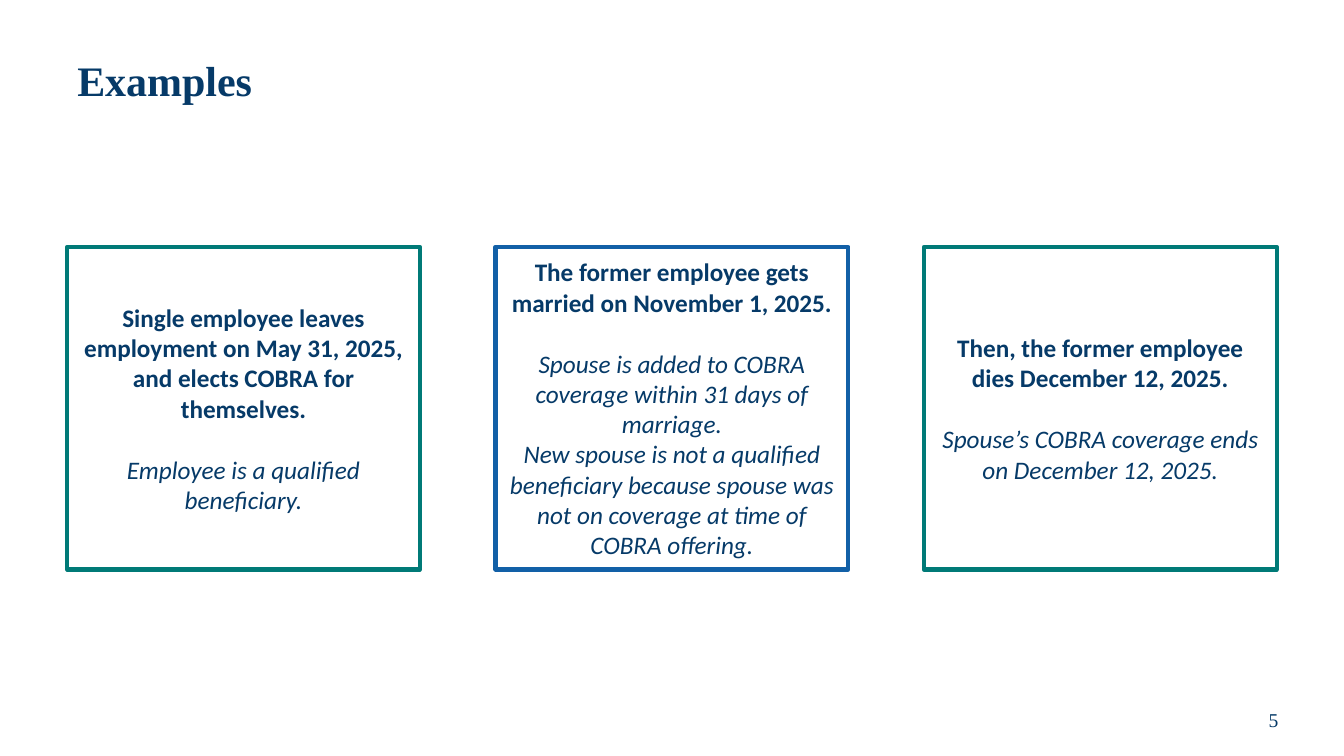
from dataclasses import dataclass

from pptx import Presentation
from pptx.dml.color import RGBColor
from pptx.enum import shapes, text
from pptx.util import Pt

NAVY, BLUE, TEAL = "063A68", "1260A7", "007A77"
CARD_LEFT, CARD_TOP, CARD_WIDTH, CARD_HEIGHT = 48, 176.4, 252, 230.4
CARD_PITCH = 306
BLANK_LINE = 22


@dataclass
class Example:
    event: str
    outcomes: list[str]
    border: str


EXAMPLES = [
    Example(
        "Single employee leaves employment on May 31, 2025, and elects COBRA for themselves.",
        ["Employee is a qualified beneficiary."],
        TEAL,
    ),
    Example(
        "The former employee gets married on November 1, 2025.",
        [
            "Spouse is added to COBRA coverage within 31 days of marriage.",
            "New spouse is not a qualified beneficiary because spouse was not on "
            "coverage at time of COBRA offering.",
        ],
        BLUE,
    ),
    Example(
        "Then, the former employee dies December 12, 2025.",
        ["Spouse’s COBRA coverage ends on December 12, 2025."],
        TEAL,
    ),
]


def set_color(color_format, hex_color: str) -> None:
    color_format.rgb = RGBColor.from_string(hex_color)


def format_paragraph(paragraph, font_name: str, size: float, align,
                     bold: bool = False, italic: bool = False) -> None:
    paragraph.alignment = align
    font = paragraph.font
    font.name, font.size, font.bold, font.italic = font_name, Pt(size), bold, italic
    set_color(font.color, NAVY)


def add_card(slide, example: Example, left: float) -> None:
    card = slide.shapes.add_shape(
        shapes.MSO_SHAPE.RECTANGLE,
        Pt(left), Pt(CARD_TOP), Pt(CARD_WIDTH), Pt(CARD_HEIGHT))
    card.shadow.inherit = False
    card.fill.background()
    set_color(card.line.color, example.border)
    card.line.width = Pt(3)

    frame = card.text_frame
    frame.word_wrap = True
    frame.vertical_anchor = text.MSO_ANCHOR.MIDDLE
    frame.margin_left = frame.margin_right = Pt(7.2)
    frame.margin_top = frame.margin_bottom = Pt(7.2)
    event = frame.paragraphs[0]
    event.text = example.event
    format_paragraph(event, "Calibri", 18, text.PP_ALIGN.CENTER, bold=True)
    for index, sentence in enumerate(example.outcomes):
        outcome = frame.add_paragraph()
        outcome.text = sentence
        outcome.space_before = Pt(0 if index else BLANK_LINE)
        format_paragraph(outcome, "Calibri", 18, text.PP_ALIGN.CENTER, italic=True)


def add_title(slide, wording: str) -> None:
    title = slide.shapes.title
    title.left, title.top, title.width, title.height = Pt(48), Pt(18), Pt(864), Pt(82.8)
    frame = title.text_frame
    frame.text = wording
    frame.auto_size = text.MSO_AUTO_SIZE.NONE
    frame.vertical_anchor = text.MSO_ANCHOR.MIDDLE
    heading = frame.paragraphs[0]
    heading.line_spacing = 0.9
    format_paragraph(heading, "Times New Roman", 30, text.PP_ALIGN.LEFT, bold=True)


def add_page_number(slide, number: int) -> None:
    frame = slide.shapes.add_textbox(Pt(867.6), Pt(496), Pt(84), Pt(36)).text_frame
    frame.word_wrap = True
    frame.vertical_anchor = text.MSO_ANCHOR.MIDDLE
    frame.text = str(number)
    format_paragraph(frame.paragraphs[0], "Times New Roman", 14, text.PP_ALIGN.CENTER)


def main() -> None:
    presentation = Presentation()
    presentation.slide_width, presentation.slide_height = Pt(960), Pt(540)
    title_only = presentation.slide_layouts[5]
    slide = presentation.slides.add_slide(title_only)
    add_title(slide, "Examples")
    for column, example in enumerate(EXAMPLES):
        add_card(slide, example, CARD_LEFT + column * CARD_PITCH)
    add_page_number(slide, 5)
    presentation.save("out.pptx")


if __name__ == "__main__":
    main()
